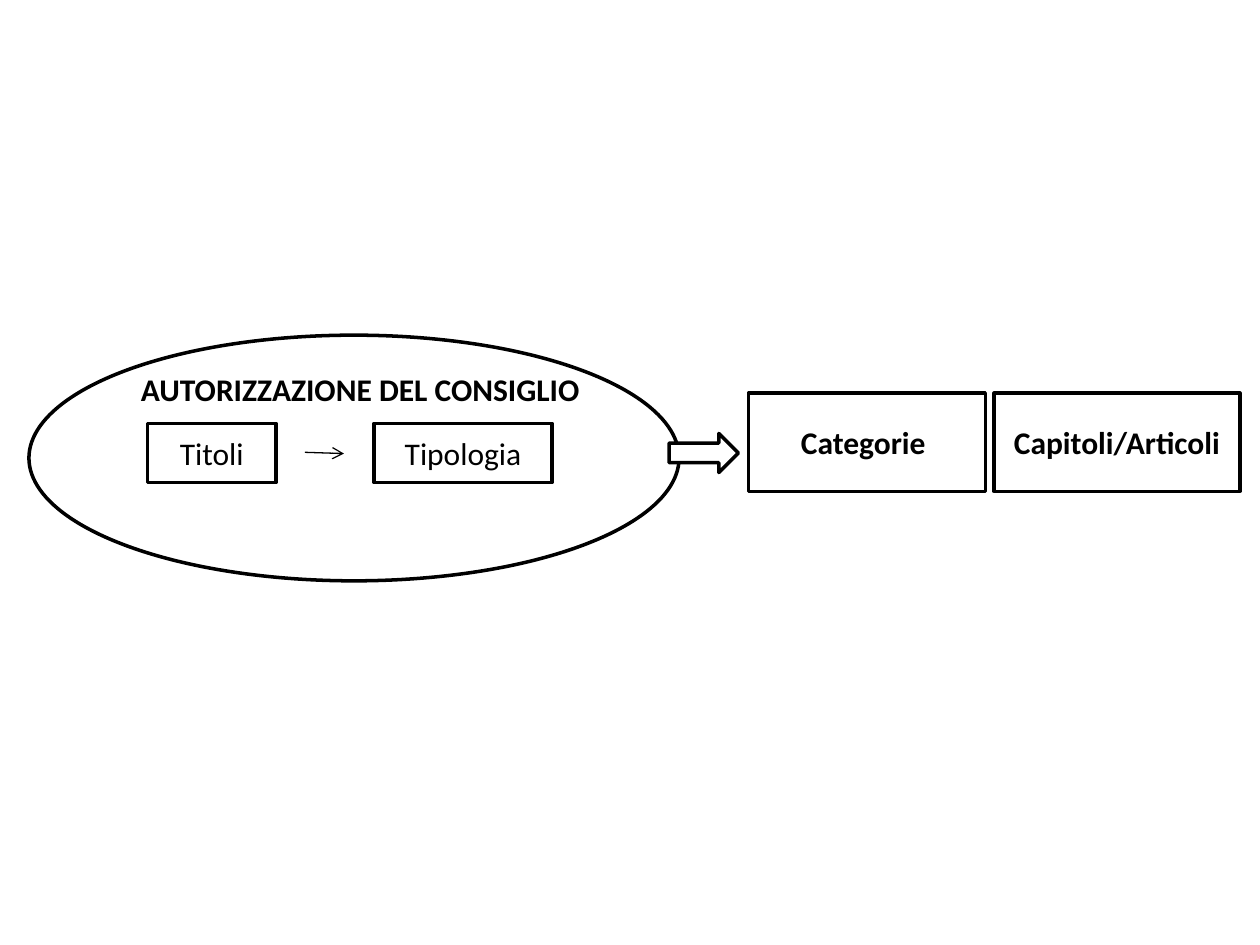
"""Build a slide on the levels of budget authorisation."""
from lxml.etree import SubElement
from pptx import Presentation
from pptx.dml.color import RGBColor
from pptx.enum.shapes import MSO_CONNECTOR, MSO_SHAPE as SHAPE
from pptx.enum.text import MSO_ANCHOR as ANCHOR, PP_ALIGN as ALIGN
from pptx.oxml.ns import qn
from pptx.util import Inches, Pt

BLACK = RGBColor(0, 0, 0)
WHITE = RGBColor(255, 255, 255)
FONT = "Calibri"

HEADING = ("AUTORIZZAZIONE DEL CONSIGLIO", (1.02, 2.89, 4.61, 0.4))
COUNCIL_OVAL = (SHAPE.OVAL, (0.23, 2.66, 5.16, 1.95))
BLOCK_ARROW = (SHAPE.RIGHT_ARROW, (5.31, 3.44, 0.55, 0.31))
THIN_ARROW = (2.42, 3.59, 2.73, 3.6)
ROWS = [
    {"top": 3.36, "height": 0.47, "bold": False,
     "boxes": [("Titoli", 1.17, 1.02), ("Tipologia", 2.97, 1.41)]},
    {"top": 3.12, "height": 0.78, "bold": True,
     "boxes": [("Categorie ", 5.94, 1.88), ("Capitoli/Articoli", 7.89, 1.95)]},
]


def inches(values):
    return [Inches(value) for value in values]


def add_outline(page, kind, place):
    shape = page.shapes.add_shape(kind, *inches(place))
    shape.shadow.inherit = False
    shape.fill.solid()
    shape.fill.fore_color.rgb = WHITE
    shape.line.color.rgb = BLACK
    shape.line.width = Pt(2)
    return shape


def write(box, text, bold, align):
    para = box.text_frame.paragraphs[0]
    para.alignment = align
    span = para.add_run()
    span.text = text
    span.font.name = FONT
    span.font.size = Pt(18)
    span.font.bold = bold
    span.font.color.rgb = BLACK


def add_thin_arrow(page):
    arrow = page.shapes.add_connector(MSO_CONNECTOR.STRAIGHT, *inches(THIN_ARROW))
    arrow.line.color.rgb = BLACK
    arrow.line.width = Pt(0.75)
    SubElement(arrow.line._get_or_add_ln(), qn("a:tailEnd"), type="arrow")
    SubElement(arrow._element.spPr, qn("a:effectLst"))


def add_heading(page):
    text, place = HEADING
    box = page.shapes.add_textbox(*inches(place))
    box.text_frame.word_wrap = True
    write(box, text, True, ALIGN.LEFT)


def add_row(page, row):
    for text, left, width in row["boxes"]:
        box = add_outline(page, SHAPE.RECTANGLE, (left, row["top"], width, row["height"]))
        box.text_frame.vertical_anchor = ANCHOR.MIDDLE
        write(box, text, row["bold"], ALIGN.CENTER)


def main():
    deck = Presentation()
    deck.slide_width, deck.slide_height = inches((10, 7.5))
    page = deck.slides.add_slide(deck.slide_layouts[6])
    inner_row, outer_row = ROWS
    add_outline(page, *COUNCIL_OVAL)
    add_row(page, inner_row)
    add_thin_arrow(page)
    add_heading(page)
    add_outline(page, *BLOCK_ARROW)
    add_row(page, outer_row)
    deck.save("out.pptx")


if __name__ == "__main__":
    main()
